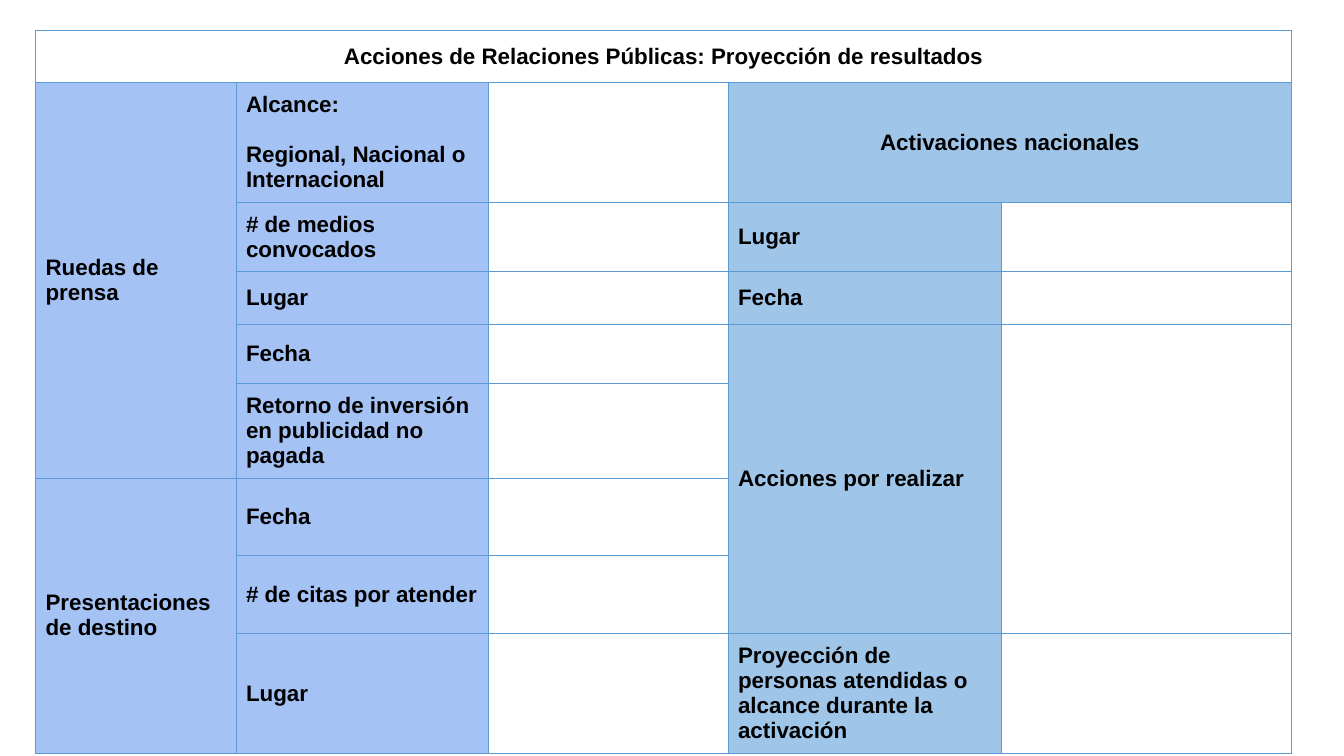
import pptx
import pptx.dml.color
import pptx.enum.text
import pptx.oxml
import pptx.oxml.ns
import pptx.util

Cm = pptx.util.Cm
Pt = pptx.util.Pt
RGBColor = pptx.dml.color.RGBColor
PP_ALIGN = pptx.enum.text.PP_ALIGN

BLACK = RGBColor(0x00, 0x00, 0x00)
PERIWINKLE = RGBColor(0xA4, 0xC2, 0xF4)
SKY = RGBColor(0x9F, 0xC5, 0xE8)
BORDER = RGBColor(0x5B, 0x9B, 0xD5)

COLUMN_WIDTHS = [5.05, 6.35, 6.05, 6.88, 7.32]
ROW_HEIGHTS = [1.32, 1.8, 1.5, 1.32, 1.5, 1.57, 1.96, 1.96, 1.96]

MERGES = [
    ((0, 0), (0, 4)),
    ((1, 0), (5, 0)),
    ((6, 0), (8, 0)),
    ((1, 3), (1, 4)),
    ((4, 3), (7, 3)),
    ((4, 4), (7, 4)),
]

TITLE = "Acciones de Relaciones Públicas: Proyección de resultados"
GROUPS = {1: "Ruedas de prensa", 6: "Presentaciones de destino"}
DETAILS = [
    ["Alcance:", "Regional, Nacional o Internacional"],
    ["# de medios convocados"],
    ["Lugar"],
    ["Fecha"],
    ["Retorno de inversión en publicidad no pagada"],
    ["Fecha"],
    ["# de citas por atender"],
    ["Lugar"],
]
ACTIVATIONS = {
    2: "Lugar",
    3: "Fecha",
    4: "Acciones por realizar",
    8: "Proyección de personas atendidas o alcance durante la activación",
}


class SlideBuilder:
    font = "Arial"
    size = Pt(16)
    inset = Cm(0.25)
    border_width = Pt(0.75)
    paragraph_gap = Pt(17.8)

    def __init__(self, slide):
        self.slide = slide

    def table(self, left, top, widths, heights, merges):
        frame = self.slide.shapes.add_table(
            len(heights), len(widths), Cm(left), Cm(top),
            Cm(sum(widths)), Cm(sum(heights)))
        table = frame.table
        table.first_row = False
        table.horz_banding = False
        for column, width in zip(table.columns, widths):
            column.width = Cm(width)
        for row, height in zip(table.rows, heights):
            row.height = Cm(height)
        for cell in table.iter_cells():
            self.borders(cell)
            cell.fill.background()
        for first, last in merges:
            table.cell(*first).merge(table.cell(*last))
        return table

    def borders(self, cell):
        properties = cell._tc.get_or_add_tcPr()
        for side in ("lnL", "lnR", "lnT", "lnB"):
            properties.append(pptx.oxml.parse_xml(
                f'<a:{side} {pptx.oxml.ns.nsdecls("a")} w="{self.border_width}">'
                f'<a:solidFill><a:srgbClr val="{BORDER}"/></a:solidFill>'
                f'</a:{side}>'))

    def label(self, cell, texts, fill=None, align=PP_ALIGN.LEFT):
        cell.vertical_anchor = pptx.enum.text.MSO_ANCHOR.MIDDLE
        cell.margin_left = cell.margin_right = self.inset
        cell.margin_top = cell.margin_bottom = self.inset
        if fill is not None:
            cell.fill.solid()
            cell.fill.fore_color.rgb = fill
        for index, text in enumerate(texts):
            frame = cell.text_frame
            para = frame.add_paragraph() if index else frame.paragraphs[0]
            para.alignment = align
            if index:
                para.space_before = self.paragraph_gap
            span = para.add_run()
            span.text = text
            span.font.name = self.font
            span.font.size = self.size
            span.font.bold = True
            span.font.color.rgb = BLACK


def main():
    deck = pptx.Presentation()
    deck.slide_width = Cm(33.87)
    deck.slide_height = Cm(19.05)
    page = SlideBuilder(deck.slides.add_slide(deck.slide_layouts[6]))

    table = page.table(0.9, 0.76, COLUMN_WIDTHS, ROW_HEIGHTS, MERGES)
    page.label(table.cell(0, 0), [TITLE], align=PP_ALIGN.CENTER)
    for row, text in GROUPS.items():
        page.label(table.cell(row, 0), [text], PERIWINKLE)
    for row, texts in enumerate(DETAILS, start=1):
        page.label(table.cell(row, 1), texts, PERIWINKLE)
    page.label(table.cell(1, 3), ["Activaciones nacionales"], SKY, PP_ALIGN.CENTER)
    for row, text in ACTIVATIONS.items():
        page.label(table.cell(row, 3), [text], SKY)

    deck.save("out.pptx")


if __name__ == "__main__":
    main()
